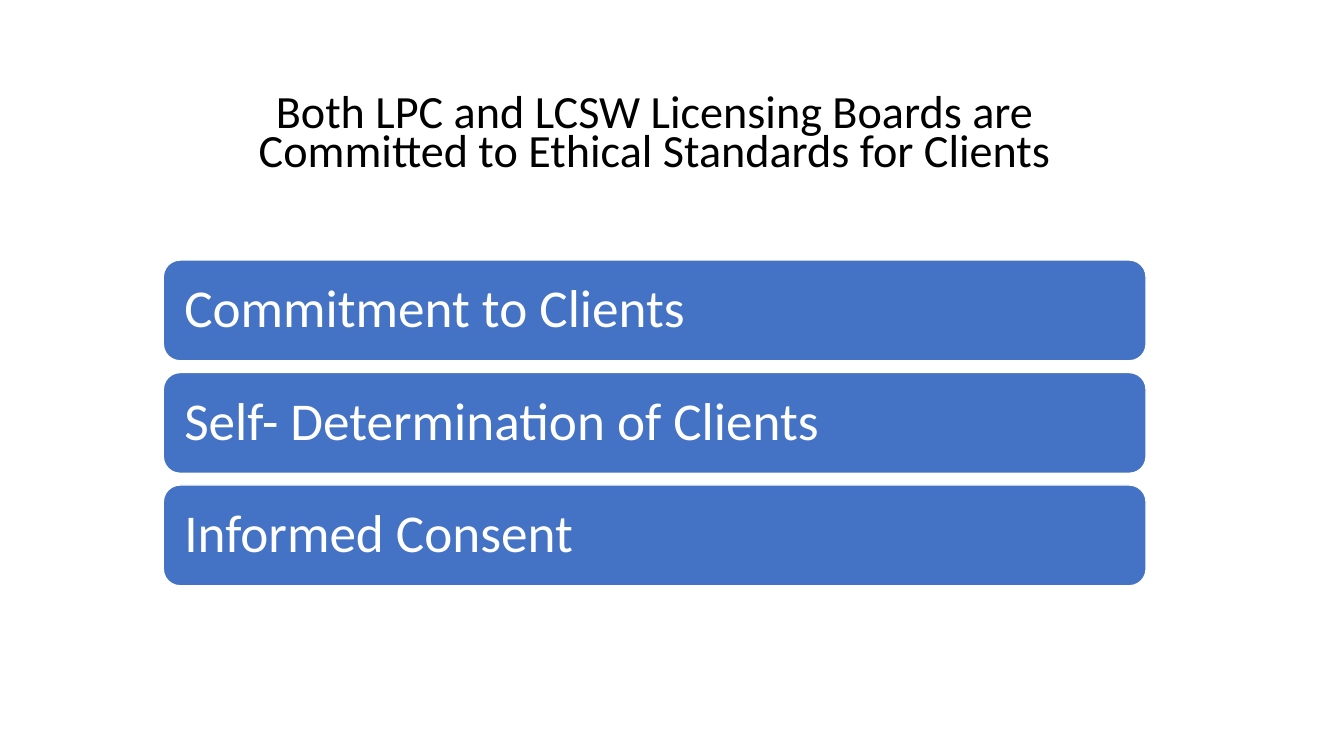
"""Build a slide on the ethical standards shared by two licensing boards."""
from pptx import Presentation
from pptx.dml.color import RGBColor
from pptx.enum.shapes import MSO_SHAPE
from pptx.enum.text import MSO_ANCHOR, PP_ALIGN
from pptx.util import Pt

BLACK = RGBColor(0x00, 0x00, 0x00)
WHITE = RGBColor(0xFF, 0xFF, 0xFF)
BLUE = RGBColor(0x44, 0x72, 0xC4)

LEFT, WIDTH = 116.64, 702
BAR_TOP, BAR_HEIGHT, BAR_PITCH = 185.76, 72, 80.35
STANDARDS = [
    "Commitment to Clients",
    "Self- Determination of Clients",
    "Informed Consent",
]


def write_text(shape, text, size, color, alignment, line_spacing, anchor):
    frame = shape.text_frame
    frame.text = text
    frame.word_wrap = True
    frame.vertical_anchor = anchor
    paragraph = frame.paragraphs[0]
    paragraph.alignment = alignment
    paragraph.line_spacing = line_spacing
    font = paragraph.runs[0].font
    font.name = "Calibri"
    font.size = Pt(size)
    font.color.rgb = color


presentation = Presentation()
presentation.slide_width = Pt(960)
presentation.slide_height = Pt(540)
slide = presentation.slides.add_slide(presentation.slide_layouts[6])

title = slide.shapes.add_textbox(Pt(LEFT), Pt(64), Pt(WIDTH), Pt(101))
title.text_frame.margin_bottom = Pt(40)
write_text(title, "Both LPC and LCSW Licensing Boards are Committed to Ethical Standards for Clients",
           33, BLACK, PP_ALIGN.CENTER, 0.7, MSO_ANCHOR.BOTTOM)

for index, standard in enumerate(STANDARDS):
    bar = slide.shapes.add_shape(MSO_SHAPE.ROUNDED_RECTANGLE, Pt(LEFT), Pt(BAR_TOP + index * BAR_PITCH),
                                 Pt(WIDTH), Pt(BAR_HEIGHT))
    bar.shadow.inherit = False
    bar.fill.solid()
    bar.fill.fore_color.rgb = BLUE
    bar.line.color.rgb = WHITE
    bar.line.width = Pt(1)
    bar.text_frame.margin_left = Pt(11.5)
    write_text(bar, standard, 38, WHITE, PP_ALIGN.LEFT, 0.9, MSO_ANCHOR.MIDDLE)

presentation.save("out.pptx")
